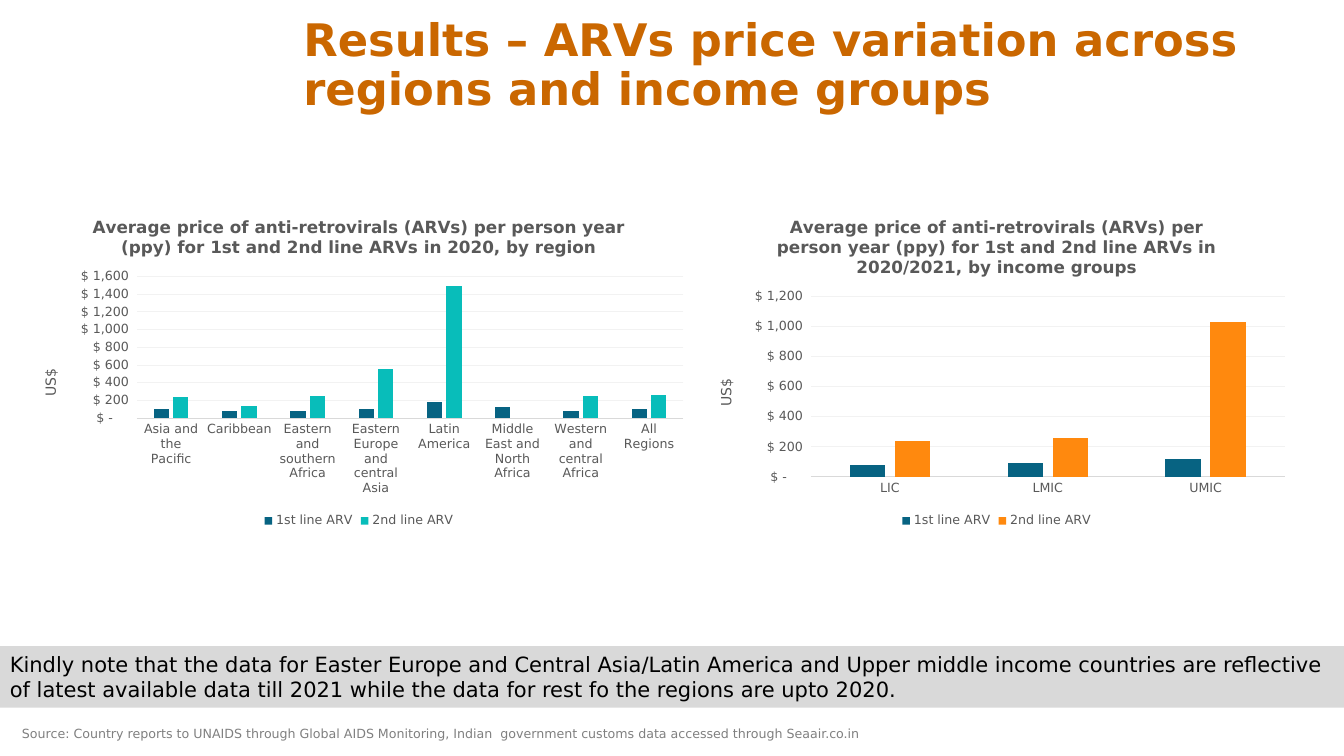
from dataclasses import dataclass
from typing import Optional

from pptx import Presentation
from pptx.chart.data import CategoryChartData as Data
from pptx.dml.color import RGBColor as Rgb
from pptx.enum.chart import XL_CHART_TYPE as Kind, XL_LEGEND_POSITION as Spot, XL_TICK_MARK as Tick
from pptx.enum.shapes import MSO_SHAPE as Form
from pptx.enum.text import MSO_ANCHOR as Anchor, MSO_AUTO_SIZE as Fit
from pptx.util import Inches, Pt

FACE = "DejaVu Sans"
WIDE, HIGH = Inches(13.33), Inches(7.5)
HUES = {
    "title": "CA6700", "source": "808080", "note": "000000", "band": "D9D9D9",
    "label": "595959", "axis": "D9D9D9", "grid": "F2F2F2",
    "first": "076382", "teal": "08BDBA", "orange": "FF890E",
}
MONEY = '_ "$"\\ * #,##0_ ;_ "$"\\ * \\-#,##0_ ;_ "$"\\ * "-"??_ ;_ @_ '
TOPIC = "Average price of anti-retrovirals (ARVs) per person year (ppy) for 1st and 2nd line ARVs in "


@dataclass
class Area:
    left: float
    top: float
    width: float
    height: float

    def box(self) -> tuple[int, int, int, int]:
        return (int(WIDE * self.left / 100), int(HIGH * self.top / 100),
                int(WIDE * self.width / 100), int(HIGH * self.height / 100))


@dataclass
class Label:
    area: Area
    text: str
    size: float
    hue: str
    bold: bool = False
    fill: Optional[str] = None
    anchor: Anchor = Anchor.TOP
    space: Optional[float] = None
    after: float = 0


@dataclass
class Plot:
    area: Area
    title: str
    names: list[str]
    first: list[Optional[float]]
    second: list[Optional[float]]
    hue: str


LABELS = [
    Label(Area(0.9, 95.33, 65.49, 3.33),
          "Source: Country reports to UNAIDS through Global AIDS Monitoring, "
          "Indian  government customs data accessed through Seaair.co.in", 9, "source"),
    Label(Area(21.83, 2.13, 71.79, 13.73),
          "Results – ARVs price variation across regions and income groups",
          32, "title", bold=True, anchor=Anchor.BOTTOM, space=0.9, after=6),
    Label(Area(0, 85.47, 100, 8.13),
          "Kindly note that the data for Easter Europe and Central Asia/Latin America and "
          "Upper middle income countries are reflective of latest available data till 2021 "
          "while the data for rest fo the regions are upto 2020.", 15, "note", fill="band"),
]
PLOTS = [
    Plot(Area(51.84, 26.53, 44.64, 43.87), TOPIC + "2020/2021, by income groups",
         ["LIC", "LMIC", "UMIC"], [80, 90, 120], [240, 260, 1030], "orange"),
    Plot(Area(1.58, 26.53, 50.26, 43.87), TOPIC + "2020, by region",
         ["Asia and the Pacific", "Caribbean", "Eastern and southern Africa",
          "Eastern Europe and central Asia", "Latin America",
          "Middle East and North Africa", "Western and central Africa", "All Regions"],
         [100, 80, 80, 100, 180, 120, 80, 100],
         [240, 140, 250, 560, 1490, None, 250, 260], "teal"),
]


def tint(hue: str) -> Rgb:
    return Rgb.from_string(HUES[hue])


def style(font, size: float, hue: str, bold: bool = False) -> None:
    font.name, font.size, font.bold = FACE, Pt(size), bold
    font.color.rgb = tint(hue)


def write(para, text: str, size: float, hue: str, bold: bool = False) -> None:
    run = para.add_run()
    run.text = text
    style(run.font, size, hue, bold)


def put_label(slide, item: Label) -> None:
    if item.fill:
        shape = slide.shapes.add_shape(Form.RECTANGLE, *item.area.box())
        shape.shadow.inherit = False
        shape.fill.solid()
        shape.fill.fore_color.rgb = tint(item.fill)
        shape.line.fill.background()
    else:
        shape = slide.shapes.add_textbox(*item.area.box())
    frame = shape.text_frame
    frame.word_wrap = True
    frame.vertical_anchor = item.anchor
    frame.auto_size = Fit.NONE if item.space else Fit.SHAPE_TO_FIT_TEXT
    para = frame.paragraphs[0]
    para.alignment = 1
    para.line_spacing = item.space
    para.space_after = Pt(item.after)
    write(para, item.text, item.size, item.hue, item.bold)


def put_plot(slide, item: Plot) -> None:
    data = Data(number_format=MONEY)
    data.categories = item.names
    data.add_series("1st line ARV", item.first)
    data.add_series("2nd line ARV", item.second)
    chart = slide.shapes.add_chart(Kind.COLUMN_CLUSTERED, *item.area.box(), data).chart
    style(chart.font, 10, "note")
    chart.has_title = True
    write(chart.chart_title.text_frame.paragraphs[0], item.title, 12, "label", True)

    chart.has_legend = True
    chart.legend.position = Spot.BOTTOM
    chart.legend.include_in_layout = False
    style(chart.legend.font, 9, "label")

    bars = chart.plots[0]
    bars.gap_width, bars.overlap, bars.vary_by_categories = 219, -27, False
    for line, hue in zip(bars.series, ("first", item.hue)):
        line.format.fill.solid()
        line.format.fill.fore_color.rgb = tint(hue)
        line.invert_if_negative = False

    base, scale = chart.category_axis, chart.value_axis
    for axis in (base, scale):
        axis.major_tick_mark = axis.minor_tick_mark = Tick.NONE
        style(axis.tick_labels.font, 9, "label")
    base.format.line.color.rgb = tint("axis")
    base.format.line.width = Pt(0.75)
    scale.format.line.fill.background()
    scale.has_major_gridlines = True
    grid = scale.major_gridlines.format.line
    grid.color.rgb = tint("grid")
    grid.width = Pt(0.75)
    scale.tick_labels.number_format = MONEY
    scale.tick_labels.number_format_is_linked = False
    scale.has_title = True
    frame = scale.axis_title.text_frame
    write(frame.paragraphs[0], "US$", 10, "label")
    frame._txBody.bodyPr.set("rot", "-5400000")
    frame._txBody.bodyPr.set("vert", "horz")


def main() -> None:
    deck = Presentation()
    deck.slide_width, deck.slide_height = WIDE, HIGH
    slide = deck.slides.add_slide(deck.slide_layouts[6])
    for item in LABELS:
        put_label(slide, item)
    for item in PLOTS:
        put_plot(slide, item)
    deck.save("out.pptx")


if __name__ == "__main__":
    main()
